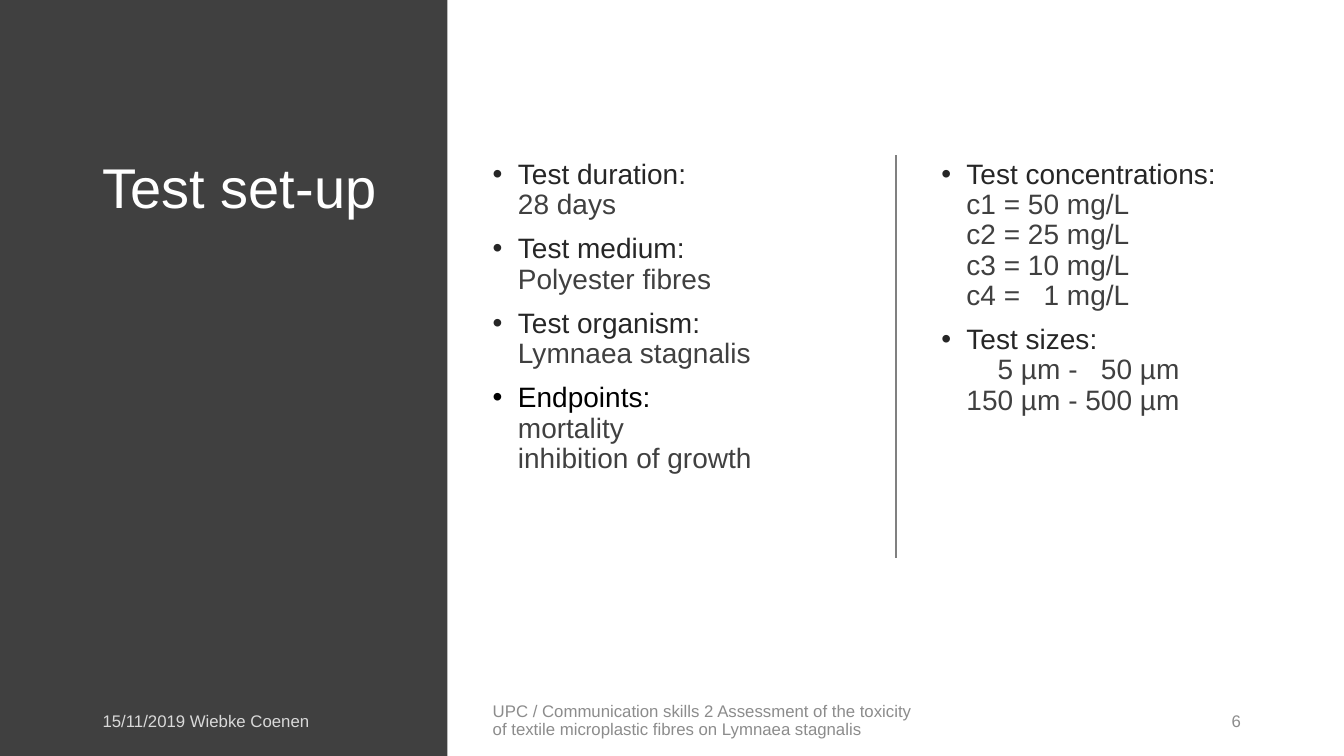
from dataclasses import dataclass

from lxml import etree
from pptx import Presentation
from pptx import util as u
from pptx.dml import color
from pptx.enum import shapes, text
from pptx.oxml import ns


@dataclass(frozen=True)
class Theme:
    font: str = "Arial"
    panel: str = "404040"
    title: str = "FFFFFF"
    heading: str = "262626"
    strong: str = "000000"
    detail: str = "404040"
    divider: str = "808080"
    panel_footer: str = "D9D9D9"
    footer: str = "8C8C8C"
    title_size: float = 40
    body_size: float = 20
    footer_size: float = 12


@dataclass(frozen=True)
class Box:
    left: float
    top: float
    width: float
    height: float

    def lengths(self):
        return [u.Pt(value) for value in (self.left, self.top, self.width, self.height)]


THEME = Theme()
FIGURE_SPACE = chr(0x2007)
CONTENT_TOP, CONTENT_HEIGHT = 110.9, 343.4
FOOTER_TOP, FOOTER_HEIGHT = 500.4, 28.8


def pad(number, digits):
    return str(number).rjust(digits, FIGURE_SPACE)


TEST_BASICS = [
    ("Test duration:", ["28 days"], THEME.heading),
    ("Test medium:", ["Polyester fibres"], THEME.heading),
    ("Test organism:", ["Lymnaea stagnalis"], THEME.heading),
    ("Endpoints:", ["mortality", "inhibition of growth"], THEME.strong),
]
TEST_DOSES = [
    (
        "Test concentrations:",
        [f"c{index} = {pad(dose, 2)} mg/L" for index, dose in enumerate((50, 25, 10, 1), 1)],
        THEME.heading,
    ),
    (
        "Test sizes:",
        [f"{pad(low, 3)} µm - {pad(high, 3)} µm" for low, high in ((5, 50), (150, 500))],
        THEME.heading,
    ),
]


def add_run(paragraph, words, size, rgb):
    run = paragraph.add_run()
    run.text = words
    run.font.name = THEME.font
    run.font.size = u.Pt(size)
    run.font.color.rgb = color.RGBColor.from_string(rgb)


def prepare_frame(shape, anchor):
    frame = shape.text_frame
    frame.word_wrap = True
    frame.auto_size = text.MSO_AUTO_SIZE.NONE
    frame.vertical_anchor = anchor
    return frame


def add_bullet(paragraph):
    properties = paragraph._p.get_or_add_pPr()
    properties.set("marL", str(u.Pt(18)))
    properties.set("indent", str(u.Pt(-18)))
    etree.SubElement(properties, ns.qn("a:buFont")).set("typeface", THEME.font)
    etree.SubElement(properties, ns.qn("a:buChar")).set("char", "•")


def draw_title_panel(slide, box, words):
    panel = slide.shapes.add_shape(shapes.MSO_SHAPE.RECTANGLE, *box.lengths())
    panel.shadow.inherit = False
    panel.fill.solid()
    panel.fill.fore_color.rgb = color.RGBColor.from_string(THEME.panel)
    panel.line.fill.background()

    title = slide.shapes.title
    title._element.addprevious(panel._element)
    title_box = Box(box.left + 66.2, CONTENT_TOP, 228.2, CONTENT_HEIGHT)
    title.left, title.top, title.width, title.height = title_box.lengths()
    paragraph = prepare_frame(title, text.MSO_ANCHOR.TOP).paragraphs[0]
    paragraph.alignment = text.PP_ALIGN.LEFT
    paragraph.line_spacing = 0.9
    add_run(paragraph, words, THEME.title_size, THEME.title)


def draw_bullet_column(slide, box, items):
    column = slide.shapes.add_textbox(*box.lengths())
    frame = prepare_frame(column, text.MSO_ANCHOR.TOP)
    for index, (heading, details, heading_color) in enumerate(items):
        paragraph = frame.add_paragraph() if index else frame.paragraphs[0]
        paragraph.line_spacing = 0.9
        paragraph.space_before = u.Pt(10)
        add_bullet(paragraph)
        add_run(paragraph, heading, THEME.body_size, heading_color)
        for detail in details:
            paragraph.add_line_break()
            add_run(paragraph, detail, THEME.body_size, THEME.detail)
    for line_break in frame._txBody.iter(ns.qn("a:br")):
        etree.SubElement(line_break, ns.qn("a:rPr")).set("sz", str(THEME.body_size * 100))


def draw_divider(slide, box):
    left, top, width, height = box.lengths()
    divider = slide.shapes.add_connector(
        shapes.MSO_CONNECTOR.STRAIGHT, left, top, left + width, top + height
    )
    divider.line.color.rgb = color.RGBColor.from_string(THEME.divider)
    divider.line.width = u.Pt(1)
    etree.SubElement(divider._element.spPr, ns.qn("a:effectLst"))


def draw_footer(slide, box, words, rgb, alignment=text.PP_ALIGN.LEFT, line_spacing=1.0):
    footer = slide.shapes.add_textbox(*box.lengths())
    paragraph = prepare_frame(footer, text.MSO_ANCHOR.MIDDLE).paragraphs[0]
    paragraph.alignment = alignment
    paragraph.line_spacing = line_spacing
    paragraph.space_after = u.Pt(6)
    add_run(paragraph, words, THEME.footer_size, rgb)


def build_test_setup_slide(presentation):
    slide = presentation.slides.add_slide(presentation.slide_layouts[5])
    draw_title_panel(slide, Box(0, 0, 319.7, 540), "Test set-up")
    draw_bullet_column(slide, Box(344.9, CONTENT_TOP, 275.8, CONTENT_HEIGHT), TEST_BASICS)
    draw_divider(slide, Box(640.1, CONTENT_TOP, 0, 288))
    draw_bullet_column(slide, Box(665.3, CONTENT_TOP, 252, CONTENT_HEIGHT), TEST_DOSES)
    draw_footer(
        slide,
        Box(66.2, FOOTER_TOP, 216, FOOTER_HEIGHT),
        "15/11/2019 Wiebke Coenen",
        THEME.panel_footer,
    )
    draw_footer(
        slide,
        Box(344.9, FOOTER_TOP, 319.7, FOOTER_HEIGHT),
        "UPC / Communication skills 2 Assessment of the toxicity "
        "of textile microplastic fibres on Lymnaea stagnalis",
        THEME.footer,
        line_spacing=0.9,
    )
    draw_footer(
        slide,
        Box(724.3, FOOTER_TOP, 169.2, FOOTER_HEIGHT),
        "6",
        THEME.footer,
        alignment=text.PP_ALIGN.RIGHT,
    )


def main():
    presentation = Presentation()
    presentation.slide_width = u.Pt(960)
    presentation.slide_height = u.Pt(540)
    build_test_setup_slide(presentation)
    presentation.save("out.pptx")


if __name__ == "__main__":
    main()
